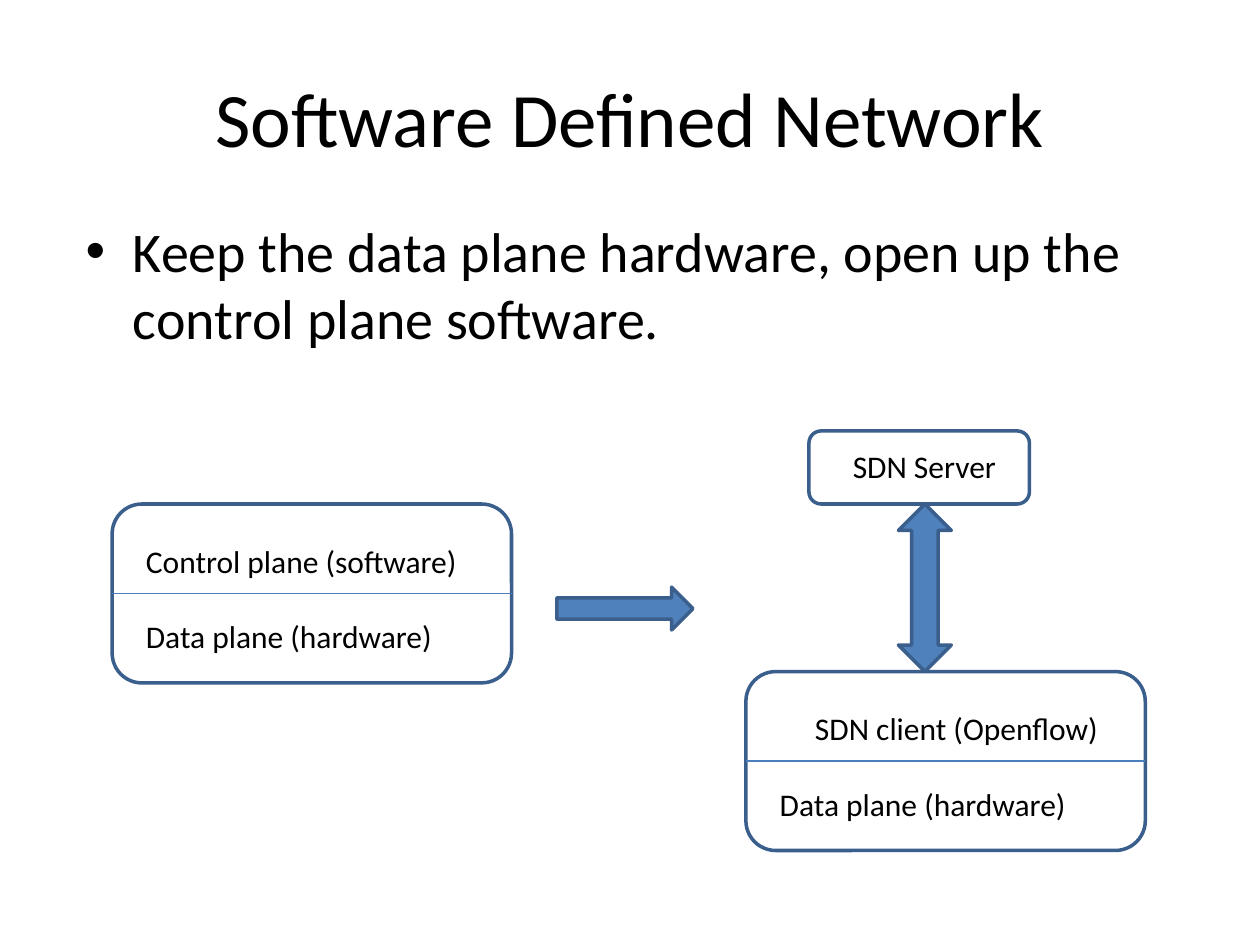
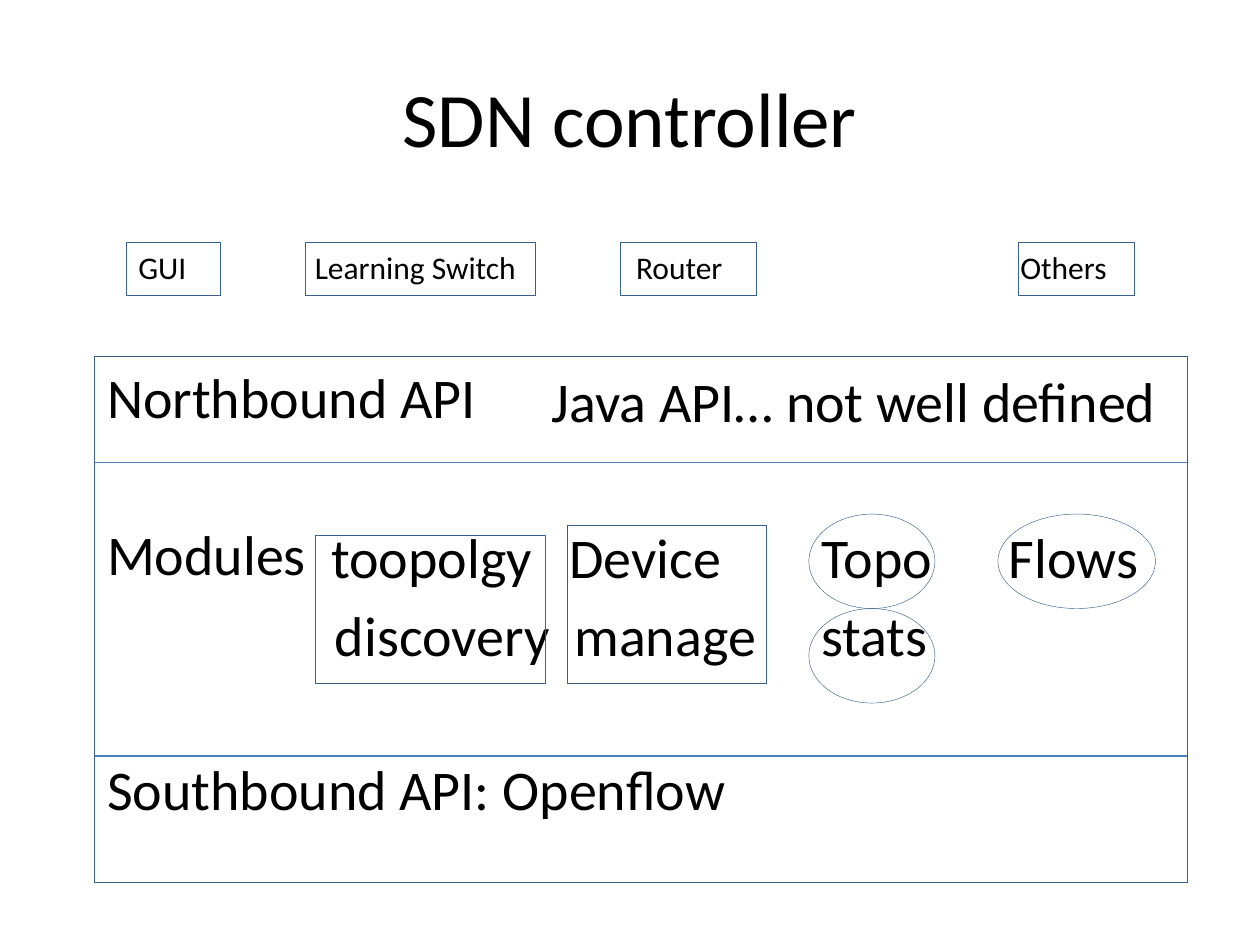
"""Build two slides on software defined networks and their controller."""
from lxml.etree import SubElement
from pptx import Presentation
from pptx.dml.color import RGBColor
from pptx.enum.shapes import MSO_CONNECTOR as CONNECTOR, MSO_SHAPE as SHAPE
from pptx.enum.text import MSO_AUTO_SIZE as AUTO_SIZE
from pptx.oxml.ns import qn
from pptx.util import Inches, Pt

COLORS = {"text": "000000", "fill": "4F81BD", "outline": "3A5F8C", "divider": "4B7EBC"}
FONT = "Calibri"
TITLE_BOX = (0.5, 0.3, 9, 1.25)
PLANE_SIZE = (3.17, 1.42)
THICK, THIN = 2, 0.25


def color(name):
    return RGBColor.from_string(COLORS[name])


def format_paragraph(paragraph, size, space_before=None):
    values = {"name": FONT, "size": Pt(size)}
    for run in paragraph.runs:
        for attribute, value in values.items():
            setattr(run.font, attribute, value)
        run.font.color.rgb = color("text")
    if space_before is not None:
        paragraph.space_before = Pt(space_before)


def set_indent(paragraph, left):
    properties = paragraph._p.get_or_add_pPr()
    properties.set("marL", str(Inches(left)))
    properties.set("indent", "0")


def set_tabs(paragraph, stops):
    tab_list = SubElement(paragraph._p.get_or_add_pPr(), qn("a:tabLst"))
    for stop in stops:
        SubElement(tab_list, qn("a:tab"), pos=str(Inches(stop)), algn="l")


def remove_bullet(paragraph):
    SubElement(paragraph._p.get_or_add_pPr(), qn("a:buNone"))
    set_indent(paragraph, 0)


def place(shape, box):
    for attribute, length in zip(("left", "top", "width", "height"), box):
        setattr(shape, attribute, Inches(length))


def add_slide(presentation, title, body_box):
    slide = presentation.slides.add_slide(presentation.slide_layouts[1])
    place(slide.shapes.title, TITLE_BOX)
    slide.shapes.title.text_frame.text = title
    format_paragraph(slide.shapes.title.text_frame.paragraphs[0], 44)
    body = slide.placeholders[1]
    place(body, body_box)
    body.text_frame.auto_size = AUTO_SIZE.NONE
    return slide, body.text_frame


def add_text(slide, box, lines, space_before=0, size=18):
    frame = slide.shapes.add_textbox(*map(Inches, box)).text_frame
    frame.word_wrap = True
    frame.text = "\n".join(lines)
    for index, paragraph in enumerate(frame.paragraphs):
        format_paragraph(paragraph, size, space_before if index else 0)
    return frame.paragraphs


def add_outline(slide, kind, box, width, fill=None):
    shape = slide.shapes.add_shape(kind, *map(Inches, box))
    shape.shadow.inherit = False
    if fill:
        shape.fill.solid()
        shape.fill.fore_color.rgb = color(fill)
    else:
        shape.fill.background()
    shape.line.color.rgb = color("outline")
    shape.line.width = Pt(width)


def add_divider(slide, left, top, width):
    ends = map(Inches, (left, top, left + width, top))
    line = slide.shapes.add_connector(CONNECTOR.STRAIGHT, *ends)
    line.line.color.rgb = color("divider")
    line.line.width = Pt(0.75)
    SubElement(line._element.spPr, qn("a:effectLst"))


def add_device(slide, left, top, upper_plane, upper_indent=0):
    width, height = PLANE_SIZE
    text_box = (left + 0.17, top + 0.25, 2.8, 1.01)
    paragraphs = add_text(slide, text_box, (upper_plane, "Data plane (hardware)"), 21.5)
    set_indent(paragraphs[0], upper_indent)
    add_outline(slide, SHAPE.ROUNDED_RECTANGLE, (left, top, width, height), THICK)
    add_divider(slide, left, top + height / 2, width)


def build_network_slide(presentation):
    slide, body = add_slide(presentation, "Software Defined Network", (0.58, 1.67, 9, 1.17))
    body.text = "Keep the data plane hardware, open up the control plane software."
    format_paragraph(body.paragraphs[0], 32)
    add_device(slide, 0.89, 4, "Control plane (software)")
    add_device(slide, 5.92, 5.33, "SDN client (Openflow)", 0.28)
    add_text(slide, (6.67, 3.5, 1.4, 0.4), ("SDN Server",))
    add_outline(slide, SHAPE.ROUNDED_RECTANGLE, (6.42, 3.42, 1.75, 0.58), THICK)
    add_outline(slide, SHAPE.UP_DOWN_ARROW, (7.13, 4, 0.42, 1.33), THICK, "fill")
    add_outline(slide, SHAPE.RIGHT_ARROW, (4.42, 4.66, 1.08, 0.34), THICK, "fill")


def build_controller_slide(presentation):
    slide, body = add_slide(presentation, "SDN controller", (0.75, 2.83, 8.75, 3.87))
    layers = {"Northbound API": None, "Modules": 51, "Southbound API: Openflow": 96}
    body.text = "\n".join(layers)
    for paragraph, space_before in zip(body.paragraphs, layers.values()):
        format_paragraph(paragraph, 32, space_before)
        remove_bullet(paragraph)

    labels = (
        (4.28, 2.86, 5.1, ("Java API… not well defined",), 0),
        (2.53, 4.1, 2, ("toopolgy", "discovery"), 0.03),
        (4.42, 4.1, 1.75, ("Device", "manage"), 0.04),
        (6.42, 4.1, 1.2, ("Topo", "stats"), 0),
        (7.91, 4.1, 1.4, ("Flows",), 0),
    )
    for left, top, width, lines, indent in labels:
        paragraphs = add_text(slide, (left, top, width, 0.64 * len(lines)), lines, 5.8, 32)
        set_indent(paragraphs[-1], indent)

    applications = ("GUI\tLearning Switch\tRouter\tOthers",)
    set_tabs(add_text(slide, (1, 1.92, 8.04, 0.4), applications)[0], (1.4, 3.95, 7))
    add_outline(slide, SHAPE.RECTANGLE, (0.75, 2.83, 8.67, 4.17), THIN)
    for top in (3.67, 6):
        add_divider(slide, 0.75, top, 8.67)
    for module in ((2.5, 4.25, 1.83, 1.17), (4.5, 4.17, 1.58, 1.25)):
        add_outline(slide, SHAPE.RECTANGLE, module, THIN)
    for left, top, width in ((6.42, 4.08, 1), (6.42, 4.83, 1), (7.92, 4.08, 1.25)):
        add_outline(slide, SHAPE.OVAL, (left, top, width, 0.75), THIN)
    for left, width in ((1, 0.75), (2.42, 1.83), (4.92, 1.08), (8.08, 0.92)):
        add_outline(slide, SHAPE.RECTANGLE, (left, 1.92, width, 0.42), THIN)


def main():
    presentation = Presentation()
    presentation.slide_width, presentation.slide_height = Inches(10), Inches(7.5)
    build_network_slide(presentation)
    build_controller_slide(presentation)
    presentation.save("out.pptx")


if __name__ == "__main__":
    main()
